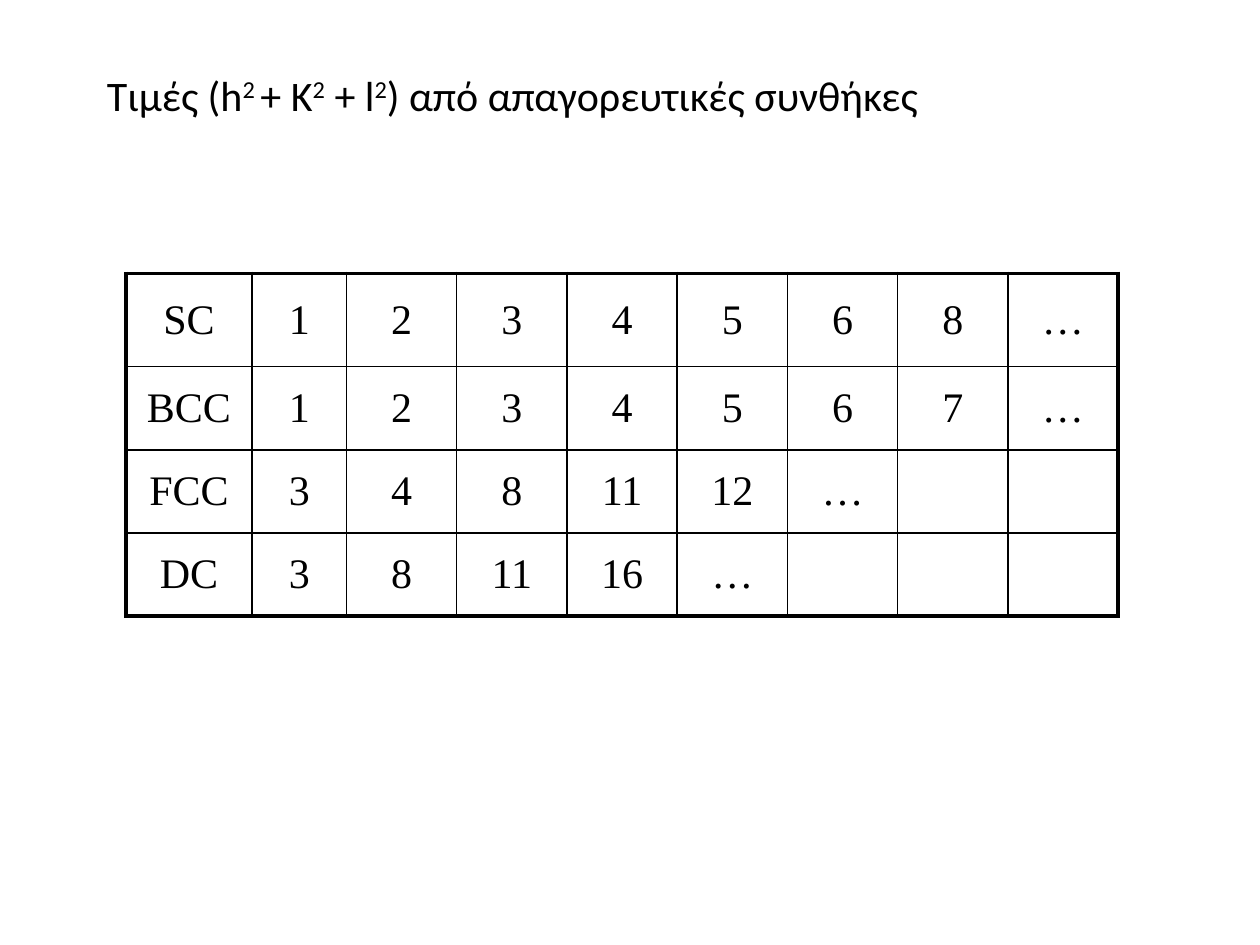
from lxml.etree import SubElement
from pptx import Presentation
from pptx.dml.color import RGBColor
from pptx.enum.text import MSO_ANCHOR, MSO_AUTO_SIZE, PP_ALIGN
from pptx.oxml import parse_xml
from pptx.oxml.ns import nsdecls, qn
from pptx.util import Inches, Pt

TITLE = [("Τιμές (h", 0), ("2 ", 1), ("+ K", 0), ("2", 1), (" + l", 0),
         ("2", 1), (") από απαγορευτικές συνθήκες", 0)]
ROWS = [
    ("SC", "1", "2", "3", "4", "5", "6", "8", "…"),
    ("BCC", "1", "2", "3", "4", "5", "6", "7", "…"),
    ("FCC", "3", "4", "8", "11", "12", "…", "", ""),
    ("DC", "3", "8", "11", "16", "…", "", "", ""),
]
WIDTHS = [1, 0.75] + [0.875] * 7
HEIGHTS = [0.74] + [0.66] * 3
THEME = {"ink": "000000", "size": 24, "head": "Calibri",
         "body": "Times New Roman", "thin": 1, "thick": 2.25}


def style(para, face):
    para.font.name = face
    para.font.size = Pt(THEME["size"])
    para.font.color.rgb = RGBColor.from_string(THEME["ink"])


def edge(cell, side, outer):
    width = Pt(THEME["thick" if outer else "thin"])
    line = SubElement(cell._tc.get_or_add_tcPr(), qn("a:ln" + side), w=str(width))
    fill = SubElement(line, qn("a:solidFill"))
    SubElement(fill, qn("a:srgbClr"), val=THEME["ink"])


def title(slide):
    box = slide.shapes.add_textbox(Inches(0.75), Inches(0.5), Inches(6.77), Inches(0.5))
    frame = box.text_frame
    frame.word_wrap = True
    frame.auto_size = MSO_AUTO_SIZE.SHAPE_TO_FIT_TEXT
    para = frame.paragraphs[0]
    style(para, THEME["head"])
    for text, raised in TITLE:
        run = para.add_run()
        run.text = text
        if raised:
            run._r.get_or_add_rPr().set("baseline", "30000")


def grid(slide):
    table = slide.shapes.add_table(
        len(ROWS), len(WIDTHS), Inches(1), Inches(2.17),
        Inches(sum(WIDTHS)), Inches(sum(HEIGHTS))).table
    table.first_row = table.horz_banding = False
    for col, width in zip(table.columns, WIDTHS):
        col.width = Inches(width)
    for row, height in zip(table.rows, HEIGHTS):
        row.height = Inches(height)
    for r, row in enumerate(ROWS):
        for c, text in enumerate(row):
            cell = table.cell(r, c)
            cell.text = text
            cell.vertical_anchor = MSO_ANCHOR.MIDDLE
            para = cell.text_frame.paragraphs[0]
            para.alignment = PP_ALIGN.CENTER
            style(para, THEME["body"])
            para._p.get_or_add_pPr().insert(0, parse_xml(
                f'<a:spcBef {nsdecls("a")}><a:spcPct val="20000"/></a:spcBef>'))
            edge(cell, "L", c == 0)
            edge(cell, "R", c == len(WIDTHS) - 1)
            edge(cell, "T", r == 0)
            edge(cell, "B", r == len(ROWS) - 1)
            cell.fill.background()


def main():
    deck = Presentation()
    deck.slide_width, deck.slide_height = Inches(10), Inches(7.5)
    slide = deck.slides.add_slide(deck.slide_layouts[6])
    title(slide)
    grid(slide)
    deck.save("out.pptx")


if __name__ == "__main__":
    main()
